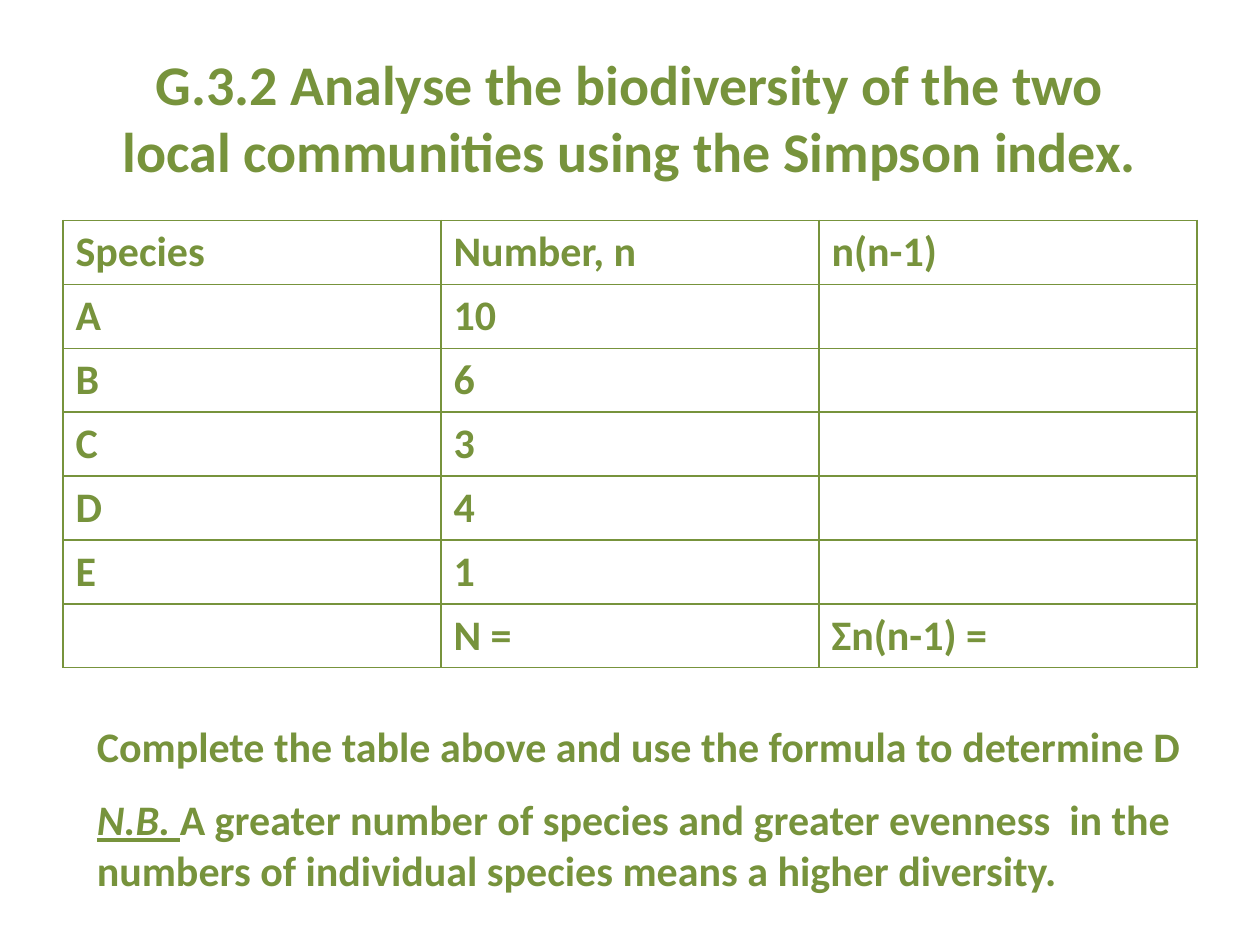
from lxml import etree
from pptx import Presentation, util as u
from pptx.dml.color import RGBColor
from pptx.enum import text
from pptx.oxml.ns import qn

PX = 9144  # EMU per px, at 100 px to the inch
GREEN = "77933C"


def format_runs(paragraph, size=24):
    values = {"name": "Calibri", "size": u.Pt(size), "bold": True}
    for run in paragraph.runs:
        for name, value in values.items():
            setattr(run.font, name, value)
        run.font.color.rgb = RGBColor.from_string(GREEN)


def add_borders(cell):
    properties = cell._tc.get_or_add_tcPr()
    for position, side in enumerate(("lnL", "lnR", "lnT", "lnB")):
        line = etree.Element(qn(f"a:{side}"), w=str(u.Pt(1)))
        fill = etree.SubElement(line, qn("a:solidFill"))
        etree.SubElement(fill, qn("a:srgbClr"), val=GREEN)
        properties.insert(position, line)


presentation = Presentation()
presentation.slide_width = 1000 * PX
presentation.slide_height = 750 * PX
slide = presentation.slides.add_slide(presentation.slide_layouts[5])

# Title
title = slide.shapes.title
title.left, title.top, title.width, title.height = [
    value * PX for value in (50, 30, 900, 125)]
title.text_frame.vertical_anchor = text.MSO_ANCHOR.MIDDLE
paragraph = title.text_frame.paragraphs[0]
paragraph.text = ("G.3.2 Analyse the biodiversity of the two\v"
                  "local communities using the Simpson index.")
paragraph.alignment = text.PP_ALIGN.CENTER
format_runs(paragraph, 32)

# Species table
rows = [
    ("Species", "Number, n", "n(n-1)"),
    ("A", "10", ""),
    ("B", "6", ""),
    ("C", "3", ""),
    ("D", "4", ""),
    ("E", "1", ""),
    ("", "N =", "Σn(n-1) ="),
]
table = slide.shapes.add_table(
    len(rows), 3, 50 * PX, 175 * PX, 900 * PX, 350 * PX).table
for row, values in enumerate(rows):
    for column, value in enumerate(values):
        cell = table.cell(row, column)
        cell.fill.background()
        add_borders(cell)
        if value:
            cell.text = value
            format_runs(cell.text_frame.paragraphs[0])

# Instruction and note below the table
notes = [
    ((67, 567, 889, 50), False,
     ["Complete the table above and use the formula to determine D"]),
    ((67, 625, 900, 91), True,
     ["N.B. ", "A greater number of species and greater evenness  in the "
      "numbers of individual species means a higher diversity."]),
]
for place, wraps, pieces in notes:
    box = slide.shapes.add_textbox(*[value * PX for value in place])
    box.text_frame.word_wrap = wraps
    paragraph = box.text_frame.paragraphs[0]
    for piece in pieces:
        paragraph.add_run().text = piece
    format_runs(paragraph)
    if len(pieces) > 1:
        label = paragraph.runs[0].font
        label.italic = label.underline = True

presentation.save("out.pptx")
